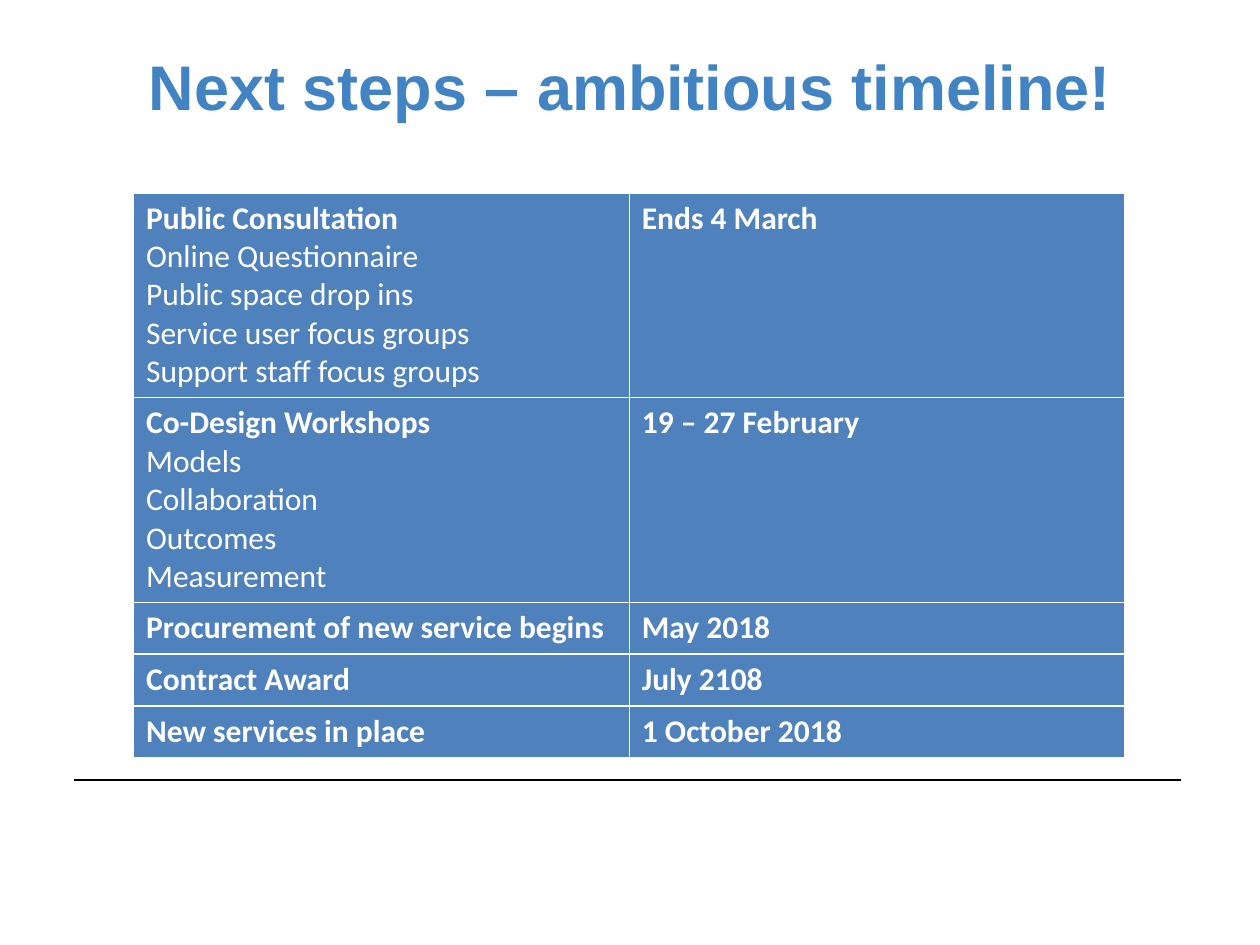
"""Build a slide with a project timeline table under a title."""
from lxml.etree import SubElement
from pptx import Presentation
from pptx.dml.color import RGBColor
from pptx.enum.shapes import MSO_CONNECTOR
from pptx.enum.text import MSO_ANCHOR, PP_ALIGN
from pptx.oxml.ns import qn
from pptx.util import Inches, Pt


def style(font, name, size, color, bold):
    font.name, font.size, font.bold = name, Pt(size), bold
    font.color.rgb = RGBColor.from_string(color)


deck = Presentation()
deck.slide_width, deck.slide_height = Inches(10), Inches(7.5)
slide = deck.slides.add_slide(deck.slide_layouts[5])

rule = slide.shapes.add_connector(
    MSO_CONNECTOR.STRAIGHT, Inches(0.59), Inches(6.19), Inches(9.37), Inches(6.19))
rule.line.color.rgb = RGBColor.from_string("000000")
rule.line.width = Pt(1)
SubElement(rule.element.spPr, qn("a:effectLst"))

title = slide.shapes.title
title.left, title.top = Inches(0.5), Inches(0.05)
title.width, title.height = Inches(9), Inches(1.25)
title.text = "Next steps – ambitious timeline!"
title.text_frame.vertical_anchor = MSO_ANCHOR.MIDDLE
head = title.text_frame.paragraphs[0]
head.alignment = PP_ALIGN.CENTER
style(head.font, "Arial", 36, "4283C4", True)

steps = [
    (["Public Consultation", "Online Questionnaire", "Public space drop ins",
      "Service user focus groups", "Support staff focus groups"], "Ends 4 March"),
    (["Co-Design Workshops", "Models", "Collaboration", "Outcomes", "Measurement"],
     "19 – 27 February"),
    (["Procurement of new service begins"], "May 2018"),
    (["Contract Award"], "July 2108"),
    (["New services in place"], "1 October 2018"),
]
table = slide.shapes.add_table(
    len(steps), 2, Inches(1.06), Inches(1.53), Inches(7.87), Inches(4.42)).table
table.horz_banding = False

for row, (lines, date) in zip(table.rows, steps):
    row.height = Inches(0.41 if len(lines) == 1 else 1.62)
    for cell, words in zip(row.cells, (lines, [date])):
        cell.fill.solid()
        cell.fill.fore_color.rgb = RGBColor.from_string("4F81BD")
        cell.text = "\n".join(words)
        for rank, para in enumerate(cell.text_frame.paragraphs):
            style(para.font, "Calibri", 18, "FFFFFF", rank == 0)

deck.save("out.pptx")
